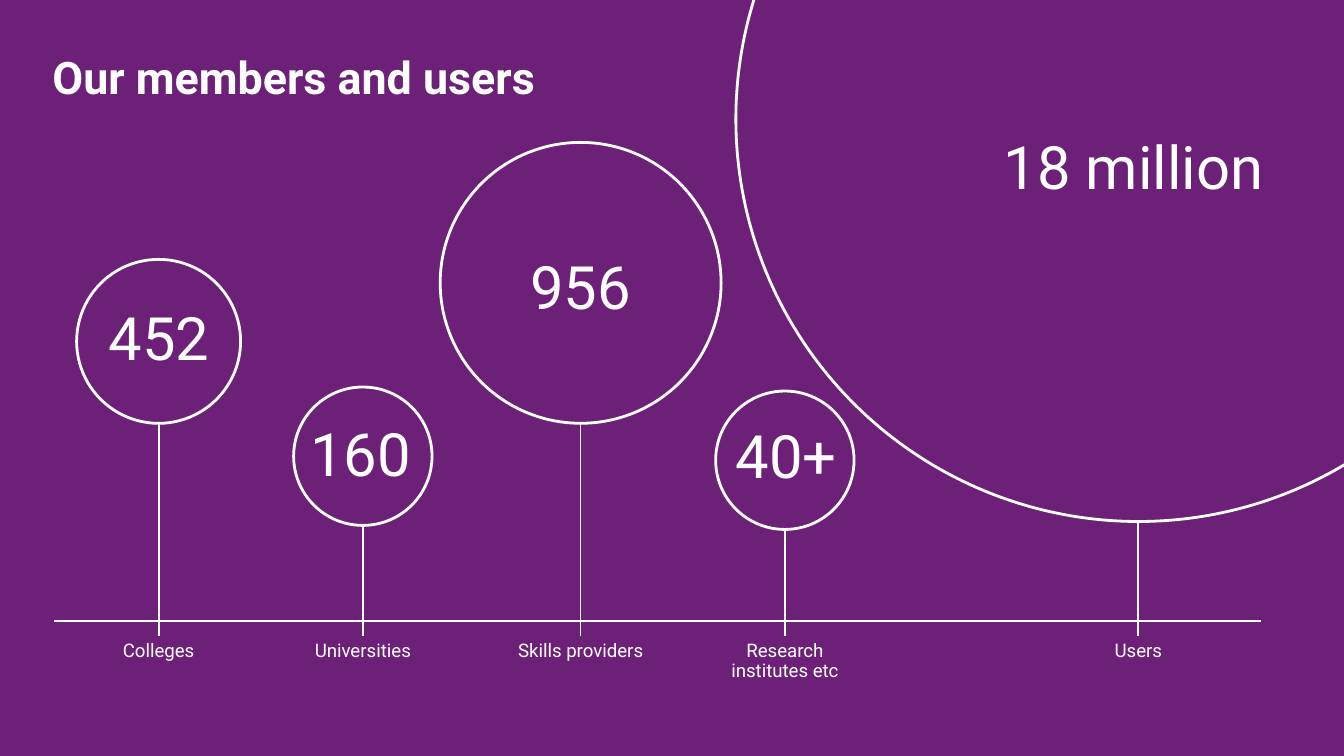
"""Build a slide of member and user counts as circles standing on a baseline."""
from dataclasses import dataclass

from lxml.etree import SubElement
from pptx import Presentation
from pptx.dml.color import RGBColor
from pptx.enum.shapes import MSO_CONNECTOR, MSO_SHAPE
from pptx.enum.text import MSO_ANCHOR, PP_ALIGN
from pptx.oxml.ns import qn
from pptx.util import Inches, Pt

WIDTH = Inches(10)
HEIGHT = Inches(5.625)
COLUMNS = 100
BASELINE = 46.2
STEM_FOOT = 47.3
LABEL_TOP = 47.7


@dataclass(frozen=True)
class Theme:
    ground: RGBColor = RGBColor(0x6D, 0x20, 0x77)
    ink: RGBColor = RGBColor(0xFF, 0xFF, 0xFF)
    font: str = "Roboto"
    title_size: int = 24
    number_size: int = 32
    label_size: int = 10
    circle_line: float = 1.5
    rule_line: float = 1


@dataclass(frozen=True)
class Group:
    label: str
    count: str
    centre: float
    bottom: float
    diameter: float
    count_centre: tuple
    count_width: float
    label_width: float = 10.4
    label_height: float = 1.5


THEME = Theme()
GROUPS = (
    Group("Colleges", "452", 11.8, 31.5, 12.2, (11.85, 25.25), 9.3),
    Group("Universities", "160", 27, 39.1, 10.3, (26.85, 33.85), 9.3),
    Group("Skills providers", "956", 43.2, 31.5, 20.9, (43.2, 21.45), 14,
          label_width=17),
    Group("Research institutes etc", "40+", 58.4, 39.4, 10.3, (58.5, 34.05), 9.2,
          label_height=3),
    Group("Users", "18 million", 84.7, 38.8, 59.9, (84.35, 12.55), 21.3),
)


def grid(cells):
    """Turn a number of grid cells into a length."""
    return round(WIDTH * cells / COLUMNS)


def add_text(slide, text, box, size, align=PP_ALIGN.CENTER, bold=False,
             anchor=MSO_ANCHOR.TOP, spacing=1.0, wrap=True):
    """Add one paragraph of text in a box without margins."""
    frame = slide.shapes.add_textbox(*map(grid, box)).text_frame
    frame.margin_left = frame.margin_right = 0
    frame.margin_top = frame.margin_bottom = 0
    frame.word_wrap = wrap
    frame.vertical_anchor = anchor
    frame.text = text
    paragraph = frame.paragraphs[0]
    paragraph.alignment = align
    paragraph.line_spacing = spacing
    font = paragraph.runs[0].font
    font.name = THEME.font
    font.size = Pt(size)
    font.bold = bold
    font.color.rgb = THEME.ink


def add_rule(slide, start, end):
    """Add a thin straight line between two grid points."""
    rule = slide.shapes.add_connector(
        MSO_CONNECTOR.STRAIGHT, *map(grid, (*start, *end)))
    rule.line.color.rgb = THEME.ink
    rule.line.width = Pt(THEME.rule_line)
    SubElement(rule._element.spPr, qn("a:effectLst"))


def add_circle(slide, centre, bottom, diameter):
    """Add an outlined circle that rests on its bottom point."""
    box = (centre - diameter / 2, bottom - diameter, diameter, diameter)
    circle = slide.shapes.add_shape(MSO_SHAPE.OVAL, *map(grid, box))
    circle.shadow.inherit = False
    circle.fill.background()
    circle.line.color.rgb = THEME.ink
    circle.line.width = Pt(THEME.circle_line)


def add_group(slide, group):
    """Add a group's circle, stem, count and label."""
    add_circle(slide, group.centre, group.bottom, group.diameter)
    add_rule(slide, (group.centre, STEM_FOOT), (group.centre, group.bottom))
    across, down = group.count_centre
    height = 6.1
    add_text(slide, group.count,
             (across - group.count_width / 2, down - height / 2,
              group.count_width, height),
             THEME.number_size, anchor=MSO_ANCHOR.MIDDLE, spacing=0.99, wrap=False)
    add_text(slide, group.label,
             (group.centre - group.label_width / 2, LABEL_TOP,
              group.label_width, group.label_height),
             THEME.label_size, spacing=0.9)


def main():
    """Build and save the slide."""
    deck = Presentation()
    deck.slide_width, deck.slide_height = WIDTH, HEIGHT
    slide = deck.slides.add_slide(deck.slide_layouts[6])
    slide.background.fill.solid()
    slide.background.fill.fore_color.rgb = THEME.ground
    add_text(slide, "Our members and users", (3.9, 3.7, 71.3, 3.7),
             THEME.title_size, align=PP_ALIGN.LEFT, bold=True)
    add_rule(slide, (4, BASELINE), (93.8, BASELINE))
    for group in GROUPS:
        add_group(slide, group)
    deck.save("out.pptx")


if __name__ == "__main__":
    main()
